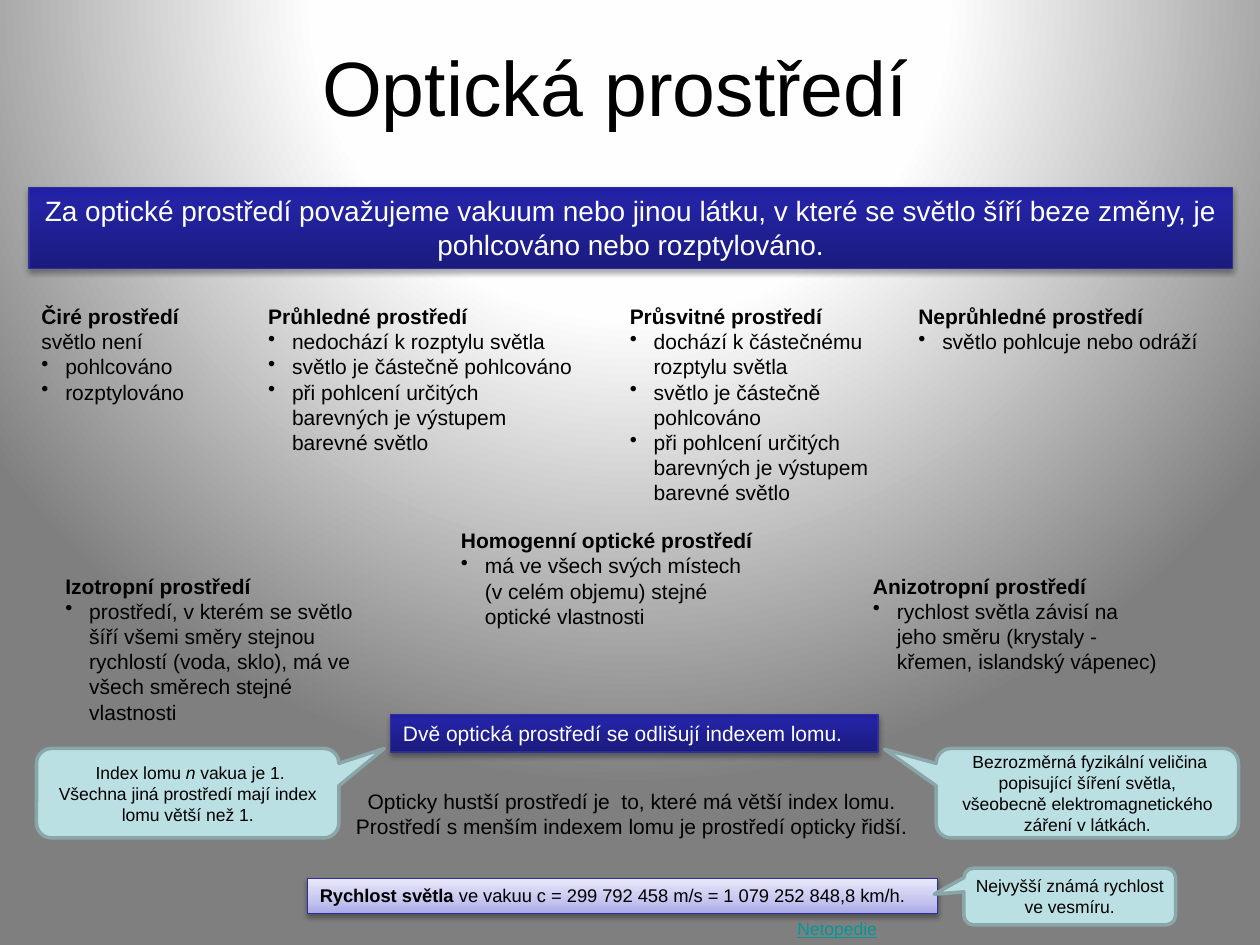
from pptx import Presentation
from pptx.dml.color import RGBColor
from pptx.enum.shapes import MSO_SHAPE as Shape
from pptx.enum.text import MSO_ANCHOR as Anchor, PP_ALIGN as Align
from pptx.oxml import parse_xml
from pptx.oxml.ns import nsdecls, qn
from pptx.util import Inches, Pt

BLACK, WHITE, LINK = "000000", "FFFFFF", "009999"
BAND_LINE, CALLOUT_FILL, CALLOUT_LINE = "2F2F98", "BBE0E3", "8AA6A8"
BACKDROP = [(0, "FFFFFF"), (40, "FEFEFE"), (100, "7F7F7F")]
DARK = [(0, "1B1B7E"), (80, "2323A3"), (100, "2020A6")]
LIGHT = [(0, "A9A9E9"), (35, "C4C4EF"), (100, "E8E8FA")]
SPOTLIGHT = ('<a:path path="circle"><a:fillToRect l="50000" t="-80000" '
             'r="50000" b="180000"/></a:path>')
UPWARD = '<a:lin ang="16200000" scaled="0"/>'
INDENT = 0.19

# Lines that start with "•" become bulleted paragraphs.
# A line is a string, or a list of (text, style) pairs.
TITLE = "Optická prostředí"
GROUPS = [  # left, top, width, heading, lines
    (0.23, 2.36, 1.6, "Čiré prostředí",
     ["světlo není", "•pohlcováno", "•rozptylováno"]),
    (2.03, 2.36, 2.67, "Průhledné prostředí",
     ["•nedochází k rozptylu světla", "•světlo je částečně pohlcováno",
      "•při pohlcení určitých barevných je výstupem barevné světlo"]),
    (4.9, 2.36, 2.1, "Průsvitné prostředí",
     ["•dochází k částečnému rozptylu světla", "•světlo je částečně pohlcováno",
      "•při pohlcení určitých barevných je výstupem barevné světlo"]),
    (7.19, 2.36, 2.5, "Neprůhledné prostředí", ["•světlo pohlcuje nebo odráží"]),
    (3.56, 4.14, 2.62, "Homogenní optické prostředí",
     ["•má ve všech svých místech\n(v celém objemu) stejné optické vlastnosti"]),
    (0.42, 4.5, 2.5, "Izotropní prostředí",
     ["•prostředí, v kterém se světlo šíří všemi směry stejnou rychlostí "
      "(voda, sklo), má ve všech směrech stejné vlastnosti"]),
    (6.83, 4.5, 2.5, "Anizotropní prostředí",
     ["•rychlost světla závisí na jeho směru (krystaly - křemen, "
      "islandský vápenec)"]),
]
DENSITY = ["Opticky hustší prostředí je  to, které má větší index lomu.",
           "Prostředí s menším indexem lomu je prostředí opticky řidší."]
BANDS = [  # place, gradient, text size, colour, alignment, line
    ((0.23, 1.49, 9.55, 0.64), DARK, 16, WHITE, Align.CENTER,
     "Za optické prostředí považujeme vakuum nebo jinou látku, v které se "
     "světlo šíří beze změny, je pohlcováno nebo rozptylováno."),
    ((3.1, 5.67, 3.87, 0.3), DARK, 12, WHITE, Align.LEFT,
     "Dvě optická prostředí se odlišují indexem lomu."),
    ((2.44, 6.97, 5, 0.28), LIGHT, 10.5, BLACK, Align.LEFT,
     [("Rychlost světla ", "bold"),
      ("ve vakuu c = 299 792 458 m/s = 1 079 252 848,8 km/h.", None)]),
]
CALLOUTS = [  # place, tip of the pointer, lines
    ((7.43, 5.94, 2.4, 0.71), (-0.67, -0.49),
     [" Bezrozměrná fyzikální veličina popisující šíření světla,",
      "všeobecně elektromagnetického záření v látkách."]),
    ((0.29, 5.94, 2.4, 0.71), (0.65, -0.5),
     [[(" Index lomu ", None), ("n", "italic"), (" vakua je 1.", None)],
      "Všechna jiná prostředí mají index lomu větší než 1."]),
    ((7.65, 6.89, 1.68, 0.45), (-0.64, -0.04),
     ["Nejvyšší známá rychlost ve vesmíru."]),
]


def color(value):
    return RGBColor.from_string(value)


def set_gradient(properties, stops, direction):
    """Swap the solid fill inside a properties element for a gradient."""
    marks = "".join(f'<a:gs pos="{position * 1000}"><a:srgbClr val="{value}"/></a:gs>'
                    for position, value in stops)
    gradient = parse_xml(f'<a:gradFill {nsdecls("a")} rotWithShape="1">'
                         f'<a:gsLst>{marks}</a:gsLst>{direction}</a:gradFill>')
    properties.replace(properties.find(qn("a:solidFill")), gradient)


def add_bullet(para):
    properties = para._p.get_or_add_pPr()
    properties.set("marL", str(Inches(INDENT)))
    properties.set("indent", str(-Inches(INDENT)))
    properties.append(parse_xml(f'<a:buChar {nsdecls("a")} char="•"/>'))


def write(shape, lines, size, ink=BLACK, align=Align.LEFT, anchor=Anchor.TOP):
    frame = shape.text_frame
    frame.word_wrap = True
    frame.vertical_anchor = anchor
    for index, line in enumerate(lines):
        para = frame.add_paragraph() if index else frame.paragraphs[0]
        para.alignment = align
        if isinstance(line, str):
            para.text = line.removeprefix("•")
            if line.startswith("•"):
                add_bullet(para)
        else:
            for text, style in line:
                span = para.add_run()
                span.text = text
                span.font.bold = style == "bold"
                span.font.italic = style == "italic"
                span.font.underline = style == "underline"
        for span in para.runs:
            span.font.name = "Arial"
            span.font.size = Pt(size)
            span.font.color.rgb = color(ink)


def add_box(page, place, lines, size, **options):
    box = page.shapes.add_textbox(*map(Inches, place))
    write(box, lines, size, **options)


def add_figure(page, kind, place, fill, line, width):
    figure = page.shapes.add_shape(kind, *map(Inches, place))
    figure.shadow.inherit = False
    figure.fill.solid()
    figure.fill.fore_color.rgb = color(fill)
    figure.line.color.rgb = color(line)
    figure.line.width = Pt(width)
    return figure


def add_band(page, place, stops, size, ink, align, line):
    band = add_figure(page, Shape.RECTANGLE, place, stops[0][1], BAND_LINE, 0.75)
    properties = band._element.spPr
    set_gradient(properties, stops, UPWARD)
    properties.find(qn("a:effectLst")).append(parse_xml(
        f'<a:outerShdw {nsdecls("a")} blurRad="{Pt(3.1)}" dist="{Pt(1.8)}" '
        'dir="5400000" rotWithShape="0"><a:srgbClr val="000000">'
        '<a:alpha val="35000"/></a:srgbClr></a:outerShdw>'))
    write(band, [line], size, ink, align)


def add_callout(page, place, tip, lines):
    callout = add_figure(page, Shape.ROUNDED_RECTANGULAR_CALLOUT, place,
                         CALLOUT_FILL, CALLOUT_LINE, 2)
    callout.adjustments[0], callout.adjustments[1] = tip
    frame = callout.text_frame
    frame.margin_left = frame.margin_right = 0
    frame.margin_top = frame.margin_bottom = 0
    write(callout, lines, 10, align=Align.CENTER, anchor=Anchor.MIDDLE)


def main():
    deck = Presentation()
    deck.slide_width, deck.slide_height = Inches(10), Inches(7.5)
    page = deck.slides.add_slide(deck.slide_layouts[6])
    page.background.fill.solid()
    page.background.fill.fore_color.rgb = color(WHITE)
    set_gradient(page._element.find(".//" + qn("p:bgPr")), BACKDROP, SPOTLIGHT)

    add_box(page, (0.43, 0.29, 8.91, 0.78), [TITLE], 44,
            align=Align.CENTER, anchor=Anchor.MIDDLE)
    for left, top, width, heading, lines in GROUPS:
        height = 0.3 + 0.2 * len(lines)
        add_box(page, (left, top, width, height),
                [[(heading, "bold")], *lines], 12)
    add_box(page, (2.72, 6.21, 4.59, 0.5), DENSITY, 12, align=Align.CENTER)
    for band in BANDS:
        add_band(page, *band)
    add_box(page, (6.23, 7.24, 1.23, 0.27), [[("Netopedie", "underline")]], 10,
            ink=LINK)
    for callout in CALLOUTS:
        add_callout(page, *callout)
    deck.save("out.pptx")


if __name__ == "__main__":
    main()
